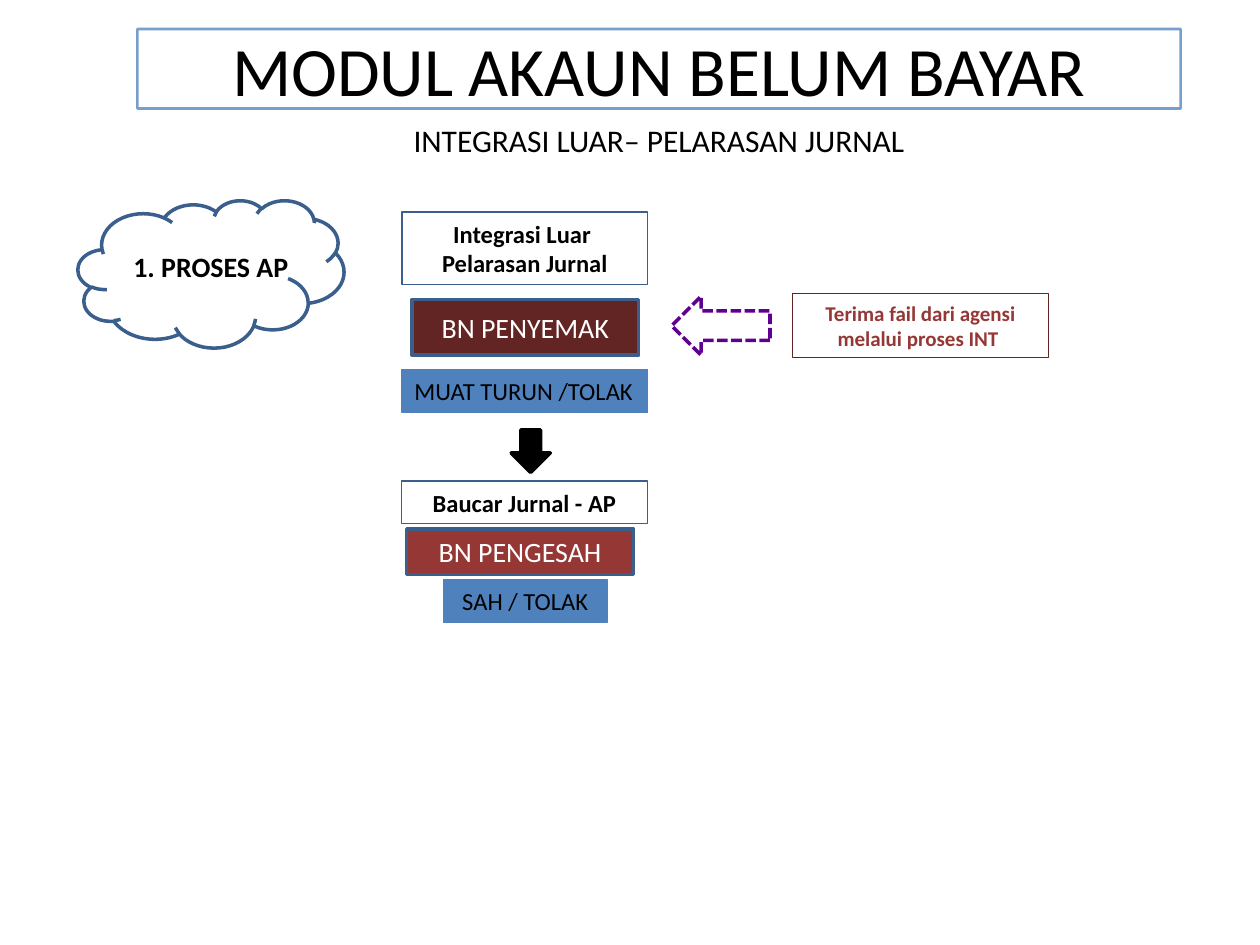
from dataclasses import dataclass

from lxml import etree
from pptx import Presentation
from pptx.dml.color import RGBColor
from pptx.enum.dml import MSO_LINE
from pptx.enum.shapes import MSO_SHAPE
from pptx.enum.text import MSO_ANCHOR, PP_ALIGN
from pptx.oxml.ns import qn
from pptx.util import Pt

RECT = MSO_SHAPE.RECTANGLE
CLOUD = MSO_SHAPE.CLOUD
DOWN = MSO_SHAPE.DOWN_ARROW
RIGHT = MSO_SHAPE.RIGHT_ARROW
DASH = MSO_LINE.SQUARE_DOT
MIDDLE = MSO_ANCHOR.MIDDLE
CENTER = PP_ALIGN.CENTER
LEFT = PP_ALIGN.LEFT


@dataclass(frozen=True)
class Theme:
    font: str = "Calibri"
    black: str = "000000"
    white: str = "FFFFFF"
    blue: str = "4F81BD"
    navy: str = "3A5F8C"
    maroon: str = "632523"
    red: str = "953735"
    purple: str = "5F0091"
    title: float = 39.6
    subtitle: float = 18
    role: float = 16
    step: float = 14
    note: float = 12
    thin: float = 0.75
    medium: float = 1.5
    thick: float = 2


class SlideBuilder:
    """Draw styled elements on the current slide."""

    def __init__(self, slide, theme):
        self.s = slide
        self.t = theme

    def add_text(self, sp, lines, size, color, bold=False, align=CENTER, wrap=True):
        tf = sp.text_frame
        tf.word_wrap = wrap
        tf.vertical_anchor = MIDDLE
        for i, line in enumerate(lines):
            p = tf.add_paragraph() if i else tf.paragraphs[0]
            p.alignment = align
            r = p.add_run()
            r.text = line
            r.font.name = self.t.font
            r.font.size = Pt(size)
            r.font.bold = bold
            r.font.color.rgb = RGBColor.from_string(color)

    def shape(self, kind, box, line, width, fill=None):
        sp = self.s.shapes.add_shape(kind, *map(Pt, box))
        sp.shadow.inherit = False
        if fill:
            sp.fill.solid()
            sp.fill.fore_color.rgb = RGBColor.from_string(fill)
        else:
            sp.fill.background()
        sp.line.color.rgb = RGBColor.from_string(line)
        sp.line.width = Pt(width)
        return sp

    def label(self, box, lines, size, color, **style):
        sp = self.s.shapes.add_textbox(*map(Pt, box))
        self.add_text(sp, lines, size, color, **style)

    def title(self, box, text):
        sp = self.shape(RECT, box, self.t.blue, self.t.medium)
        rgb = sp.element.spPr.find(".//" + qn("a:srgbClr"))
        etree.SubElement(rgb, qn("a:alpha"), val="76000")
        self.add_text(sp, [text], self.t.title, self.t.black)

    def heading(self, box, *lines):
        sp = self.shape(RECT, box, self.t.navy, self.t.thin)
        self.add_text(sp, lines, self.t.step, self.t.black, bold=True)

    def role(self, box, text, fill):
        sp = self.shape(RECT, box, self.t.navy, self.t.thick, fill)
        self.add_text(sp, [text], self.t.role, self.t.white)

    def action(self, box, text, align=CENTER):
        sp = self.shape(RECT, box, self.t.blue, self.t.thin, self.t.blue)
        self.add_text(sp, [text], self.t.step, self.t.black, align=align)

    def note(self, box, text):
        sp = self.shape(RECT, box, self.t.maroon, self.t.thin)
        self.add_text(sp, [text], self.t.note, self.t.red, bold=True)

    def dashed_arrow(self, box):
        sp = self.shape(RIGHT, box, self.t.purple, self.t.thick)
        sp.rotation = 180
        sp.line.dash_style = DASH


def main():
    prs = Presentation()
    prs.slide_width, prs.slide_height = Pt(720), Pt(540)
    t = Theme()
    b = SlideBuilder(prs.slides.add_slide(prs.slide_layouts[6]), t)

    b.title((78.5, 16.6, 596.2, 45.4), "MODUL AKAUN BELUM BAYAR")
    b.label((78.5, 65.5, 596.2, 29), ["INTEGRASI LUAR– PELARASAN JURNAL"], t.subtitle, t.black)

    b.role((235.4, 171.2, 129.6, 31.8), "BN PENYEMAK", t.maroon)
    b.action((229.7, 211.2, 140.4, 24.4), "MUAT TURUN /TOLAK", LEFT)
    b.role((232.4, 302.2, 129.6, 26), "BN PENGESAH", t.red)
    b.action((253.4, 331.2, 93.6, 24.4), "SAH / TOLAK")
    b.heading((229.7, 121.2, 140.4, 41.2), "Integrasi Luar ", "Pelarasan Jurnal")
    b.shape(DOWN, (292.1, 245.6, 22.4, 24.4), t.black, t.thick, t.black)
    b.heading((229.5, 274.8, 140.4, 24.4), "Baucar Jurnal - AP")

    b.note((452.9, 167.8, 146.2, 36.3), "Terima fail dari agensi melalui proses INT ")
    b.dashed_arrow((383.8, 169.2, 56.2, 33.8))

    b.shape(CLOUD, (44.6, 114.5, 152, 84.2), t.navy, t.thick)
    b.label((69.1, 139, 104.4, 26.6), ["1. PROSES AP"], t.role, t.black,
            bold=True, align=LEFT, wrap=False)

    prs.save("out.pptx")


if __name__ == "__main__":
    main()
